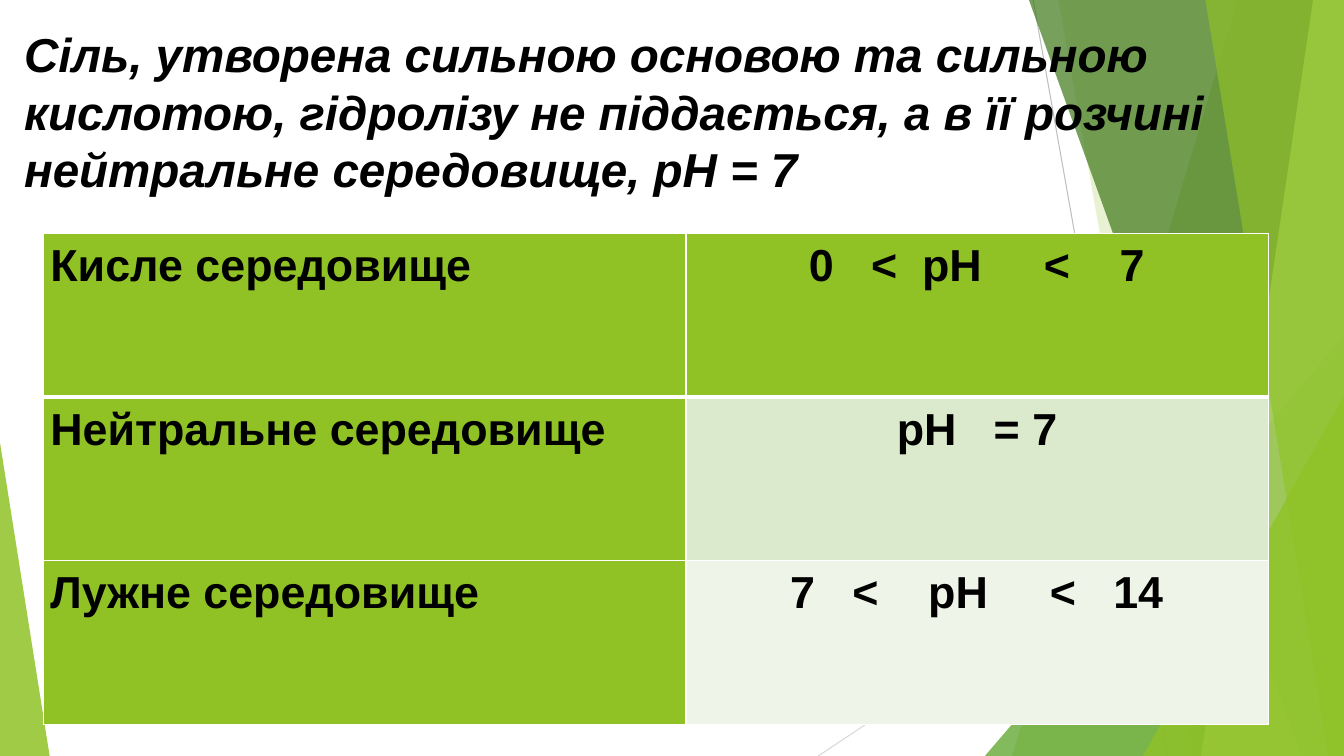
import pptx
import pptx.dml.color
import pptx.enum.shapes
import pptx.enum.text
import pptx.oxml
import pptx.oxml.ns
import pptx.util

Pt = pptx.util.Pt
MID = pptx.enum.text.PP_ALIGN.CENTER
LEFT = pptx.enum.text.PP_ALIGN.LEFT
TOP = pptx.enum.text.MSO_ANCHOR.TOP
WIDE, HIGH = 960, 540
GREEN, WHITE, BLACK = "90C226", "FFFFFF", "000000"

FACETS = [
    (GREEN, 30, [(884, 0), (WIDE, 0), (WIDE, HIGH), (723, HIGH)]),
    (GREEN, 20, [(756, 0), (WIDE, 0), (WIDE, HIGH), (852, HIGH)]),
    ("54A021", 72, (703.5, 240, 256.5, 300, 1)),
    ("3F7819", 70, [(735, 0), (WIDE, 0), (WIDE, HIGH), (929.5, HIGH)]),
    ("C0E474", 70, [(938, 0), (WIDE, 0), (WIDE, HIGH), (858, HIGH)]),
    (GREEN, 65, [(861, 0), (WIDE, 0), (WIDE, HIGH), (949, HIGH)]),
    (GREEN, 80, (816.5, 283, 143.5, 257, 1)),
    (GREEN, 85, (0, 316, 35.5, 224, 0)),
]
TITLE = ("Сіль, утворена сильною основою та сильною кислотою, гідролізу не "
         "піддається, а в її розчині нейтральне середовище, pH = 7")
ROWS = [
    ("Кисле середовище", "0   <  рН     <    7", GREEN),
    ("Нейтральне середовище", "рН   = 7", "DBE9CD"),
    ("Лужне середовище", "7   <    рН     <   14", "EEF4E8"),
]


def tint(code):
    return pptx.dml.color.RGBColor.from_string(code)


def node(text):
    space = pptx.oxml.ns.nsdecls("a")
    return pptx.oxml.parse_xml(text.replace(">", f" {space}>", 1))


class Deck:
    font = "Arial"

    def __init__(self):
        self.prs = pptx.Presentation()
        self.prs.slide_width, self.prs.slide_height = Pt(WIDE), Pt(HIGH)
        self.slide = self.prs.slides.add_slide(self.prs.slide_layouts[5])
        self.shapes = self.slide.shapes

    def style(self, para, size, align, slant=False):
        font = para.font
        font.name, font.size, font.bold, font.italic = self.font, Pt(size), True, slant
        font.color.rgb = tint(BLACK)
        para.alignment = align

    def line(self, x1, y1, x2, y2, color):
        kind = pptx.enum.shapes.MSO_CONNECTOR.STRAIGHT
        line = self.shapes.add_connector(kind, Pt(x1), Pt(y1), Pt(x2), Pt(y2))
        line.line.color.rgb = tint(color)
        line.line.width = Pt(0.75)
        line._element.spPr.append(node("<a:effectLst></a:effectLst>"))

    def facet(self, color, alpha, form):
        if isinstance(form, tuple):
            *box, peak = form
            kind = pptx.enum.shapes.MSO_SHAPE.ISOSCELES_TRIANGLE
            shape = self.shapes.add_shape(kind, *map(Pt, box))
            shape.adjustments[0] = peak
        else:
            first, *rest = [(Pt(x), Pt(y)) for x, y in form]
            pen = self.shapes.build_freeform(*first)
            pen.add_line_segments(rest, close=True)
            shape = pen.convert_to_shape()
        shape.shadow.inherit = False
        shape.fill.solid()
        shape.fill.fore_color.rgb = tint(color)
        shape.line.fill.background()
        fill = shape._element.spPr.find(pptx.oxml.ns.qn("a:solidFill"))
        fill[0].append(node(f'<a:alpha val="{alpha * 1000}"></a:alpha>'))

    def title(self, text, x, y, w, h):
        title = self.shapes.title
        title.left, title.top, title.width, title.height = map(Pt, (x, y, w, h))
        frame = title.text_frame
        frame.text = text
        frame.word_wrap = True
        frame.auto_size = pptx.enum.text.MSO_AUTO_SIZE.NONE
        frame.vertical_anchor = TOP
        self.style(frame.paragraphs[0], 34, LEFT, True)
        title._element.getparent().append(title._element)

    def cell(self, cell, text, color, align, top, base):
        cell.text = text
        cell.margin_left = cell.margin_right = Pt(5)
        cell.margin_top = cell.margin_bottom = 0
        cell.vertical_anchor = TOP
        cell.fill.solid()
        cell.fill.fore_color.rgb = tint(color)
        para = cell.text_frame.paragraphs[0]
        self.style(para, 32, align)
        para.line_spacing = 1.15
        sides = zip("LRTB", (1, 1, top, base))
        for spot, (side, width) in enumerate(sides):
            edge = node(f'<a:ln{side} w="{Pt(width)}"><a:solidFill>'
                        f'<a:srgbClr val="{WHITE}"/></a:solidFill></a:ln{side}>')
            cell._tc.tcPr.insert(spot, edge)

    def table(self, rows, x, y, cols, high):
        box = map(Pt, (x, y, sum(cols), high * len(rows)))
        table = self.shapes.add_table(len(rows), len(cols), *box).table
        for col, width in zip(table.columns, cols):
            col.width = Pt(width)
        for i, (name, range_, color) in enumerate(rows):
            table.rows[i].height = Pt(high)
            top, base = (3 if i == 1 else 1), (3 if i == 0 else 1)
            self.cell(table.cell(i, 0), name, GREEN, LEFT, top, base)
            self.cell(table.cell(i, 1), range_, color, MID, top, base)


def main():
    deck = Deck()
    deck.line(738, 0, 834, HIGH, "BFBFBF")
    deck.line(WIDE, 290, 584.5, HIGH, "D9D9D9")
    for facet in FACETS:
        deck.facet(*facet)
    deck.title(TITLE, 10, 14.5, 937.5, 137.5)
    deck.table(ROWS, 31, 166.5, (459, 416), 117)
    deck.prs.save("out.pptx")


if __name__ == "__main__":
    main()
